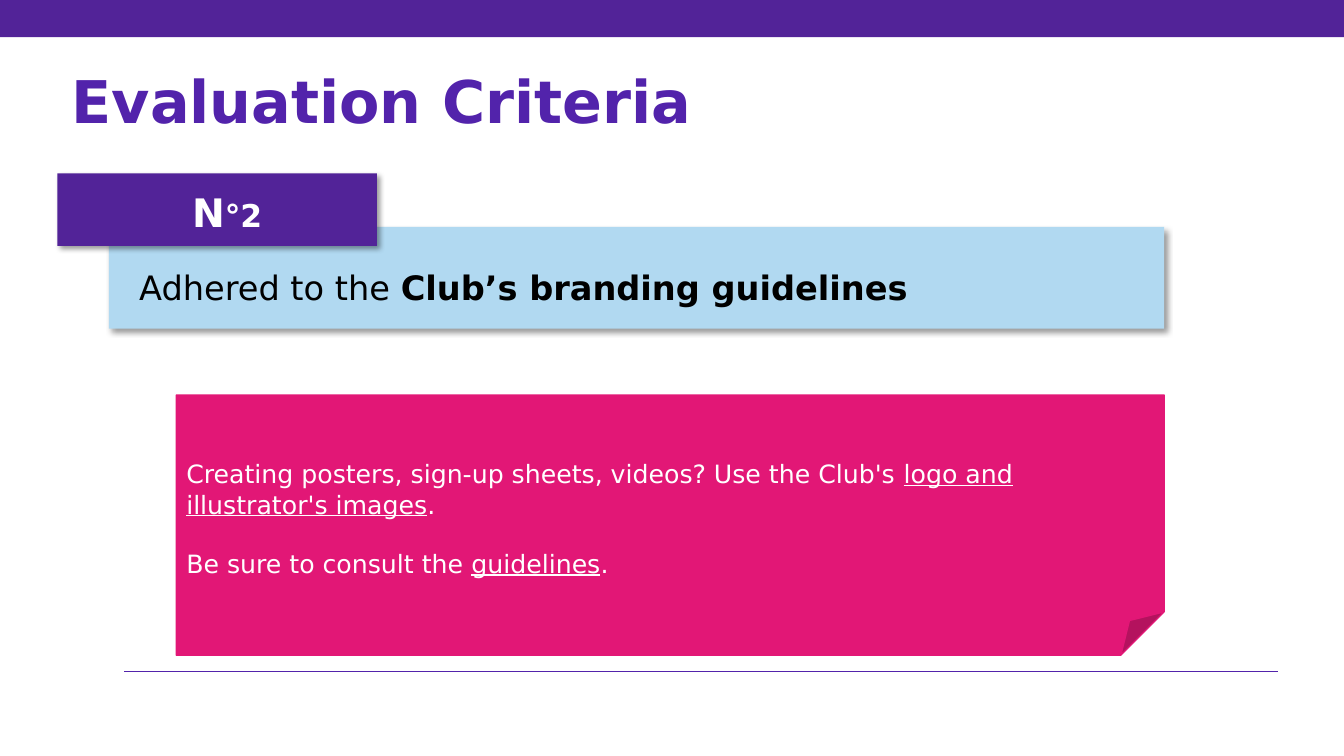
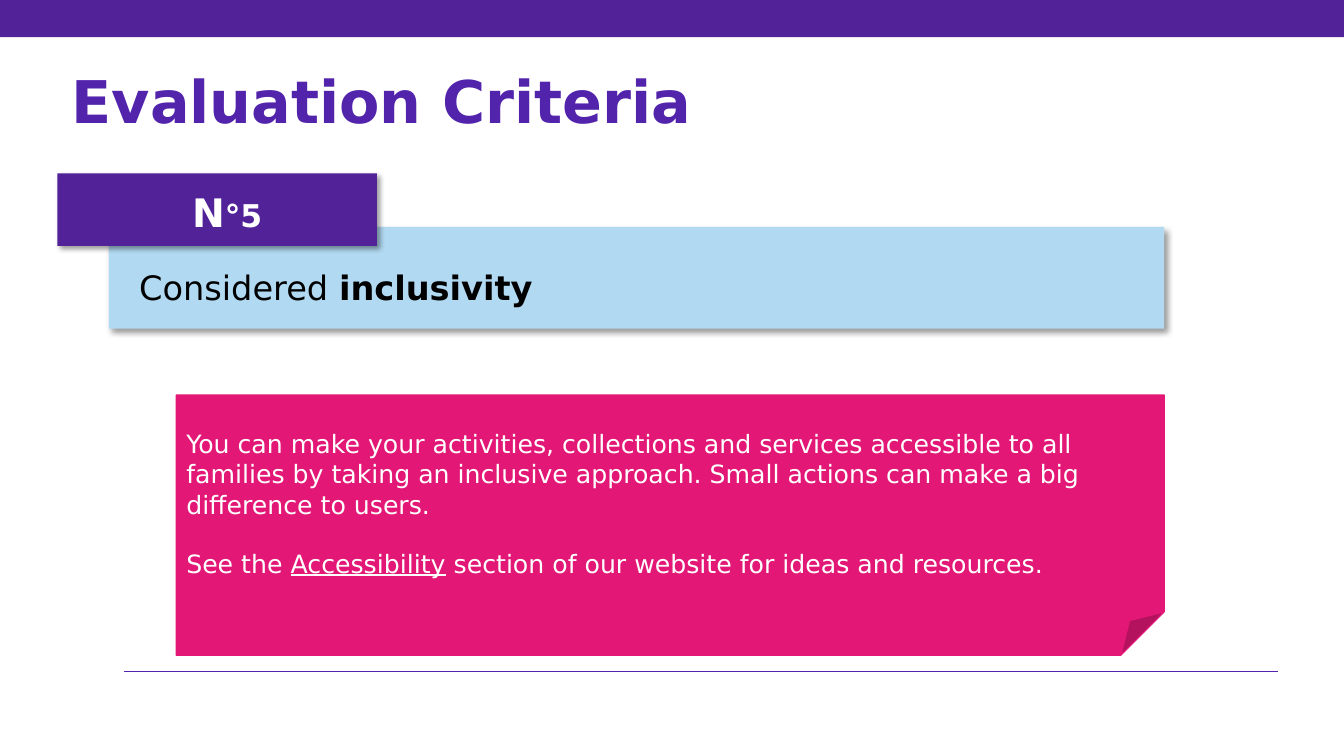
from lxml import etree
from pptx import Presentation, util as u
from pptx.dml.color import RGBColor
from pptx.enum import shapes, text
from pptx.oxml import ns

COLOURS = {
    "band": "522398", "title": "5223AB", "criterion": "B1D9F1", "note": "E21776",
    "black": "000000", "white": "FFFFFF",
}
FONT = "DejaVu Sans"
SLIDE_SIZE = (960, 540)
PLACES = {
    "band": (0, 0, SLIDE_SIZE[0], 26.6),
    "title": (43.9, 26.6, 866.2, 73.4),
    "criterion": (77.8, 162, 753.8, 72.7),
    "number": (41, 123.8, 228.2, 51.8),
    "note": (126, 282.2, 705.6, 185.8),
}
FOOTER_LINE = (88.6, 479.5, 913, 479.5)
ANCHOR = text.MSO_ANCHOR
ALIGN = text.PP_ALIGN

# Each text is a list of paragraphs, each paragraph a list of (words, font values).
BOLD = {"bold": True}
LINK = {"underline": True}
CRITERIA = [
    {
        "number": "N°2",
        "criterion": [("Adhered to the ", {}), ("Club’s branding guidelines", BOLD)],
        "note": [
            [("Creating posters, sign-up sheets, videos? Use the Club's ", {}),
             ("logo and illustrator's images", LINK), (".", {})],
            [("Be sure to consult the ", {}), ("guidelines", LINK), (".", {})],
        ],
    },
    {
        "number": "N°5",
        "criterion": [("Considered ", {}), ("inclusivity", BOLD)],
        "note": [
            [("You can make your activities, collections and services accessible to all "
              "families by taking an inclusive approach. Small actions can make a big "
              "difference to users.", {})],
            [("See the ", {}), ("Accessibility", LINK),
             (" section of our website for ideas and resources.", {})],
        ],
    },
]


def colour(name):
    return RGBColor.from_string(COLOURS[name])


def set_values(target, values):
    for name, value in values.items():
        setattr(target, name, value)


def add_effects(shape, shadow=False):
    """Replace the theme's effects by none, or by a soft shadow to the lower right."""
    effects = etree.SubElement(shape._element.spPr, ns.qn("a:effectLst"))
    if shadow:
        outer = etree.SubElement(
            effects, ns.qn("a:outerShdw"), blurRad=str(u.Pt(4)), dist=str(u.Pt(3)),
            dir=str(45 * 60000), algn="tl", rotWithShape="0")
        tint = etree.SubElement(outer, ns.qn("a:srgbClr"), val=COLOURS["black"])
        etree.SubElement(tint, ns.qn("a:alpha"), val="40000")


def add_box(page, place, fill, kind=shapes.MSO_SHAPE.RECTANGLE, outline=False, shadow=False):
    box = page.shapes.add_shape(kind, *map(u.Pt, PLACES[place]))
    box.fill.solid()
    box.fill.fore_color.rgb = colour(fill)
    if outline:
        box.line.color.rgb = colour(fill)
        box.line.width = u.Pt(1)
    else:
        box.line.fill.background()
    add_effects(box, shadow)
    return box


def write(box, paragraphs, size, ink, anchor, align=ALIGN.LEFT, insets=(7.2, 3.6, 7.2, 3.6),
          gap=0, **font):
    """Fill a box; insets run left, top, right, bottom and gap parts the paragraphs."""
    frame = box.text_frame
    sides = ("margin_left", "margin_top", "margin_right", "margin_bottom")
    set_values(frame, {"word_wrap": True, "auto_size": text.MSO_AUTO_SIZE.NONE,
                       "vertical_anchor": anchor, **dict(zip(sides, map(u.Pt, insets)))})
    for index, spans in enumerate(paragraphs):
        para = frame.add_paragraph() if index else frame.paragraphs[0]
        para.alignment = align
        para.space_before = u.Pt(gap if index else 0)
        for words, values in spans:
            span = para.add_run()
            span.text = words
            set_values(span.font, {"name": FONT, "size": u.Pt(size), **font, **values})
            span.font.color.rgb = colour(ink)


def add_frame(page):
    """Draw the band, footer line and title that every slide shares."""
    add_box(page, "band", "band")
    line = page.shapes.add_connector(shapes.MSO_CONNECTOR.STRAIGHT, *map(u.Pt, FOOTER_LINE))
    line.line.color.rgb = colour("title")
    line.line.width = u.Pt(1)
    add_effects(line)
    title = page.shapes.title
    set_values(title, dict(zip(("left", "top", "width", "height"), map(u.Pt, PLACES["title"]))))
    write(title, [[("Evaluation Criteria", BOLD)]], 42, "title", ANCHOR.BOTTOM)


def add_criterion(page, spans):
    box = add_box(page, "criterion", "criterion", shadow=True)
    write(box, [spans], 24, "black", ANCHOR.TOP, insets=(21.6, 28.8, 21.6, 14.4))


def add_number(page, number):
    box = add_box(page, "number", "band", shadow=True)
    write(box, [[(number, BOLD)]], 28, "white", ANCHOR.MIDDLE, ALIGN.CENTER,
          insets=(21.6, 10.8, 7.2, 7.2))
    box.text_frame.paragraphs[0].runs[0]._r.get_or_add_rPr().set("cap", "small")


def add_note(page, paragraphs):
    box = add_box(page, "note", "note", shapes.MSO_SHAPE.FOLDED_CORNER, outline=True)
    write(box, paragraphs, 18, "white", ANCHOR.BOTTOM, insets=(7.2, 3.6, 7.2, 23.5), gap=21)


def main():
    deck = Presentation()
    deck.slide_width, deck.slide_height = map(u.Pt, SLIDE_SIZE)
    title_only = deck.slide_layouts[5]
    for entry in CRITERIA:
        page = deck.slides.add_slide(title_only)
        add_frame(page)
        add_criterion(page, entry["criterion"])
        add_number(page, entry["number"])
        add_note(page, entry["note"])
    deck.save("out.pptx")


if __name__ == "__main__":
    main()
